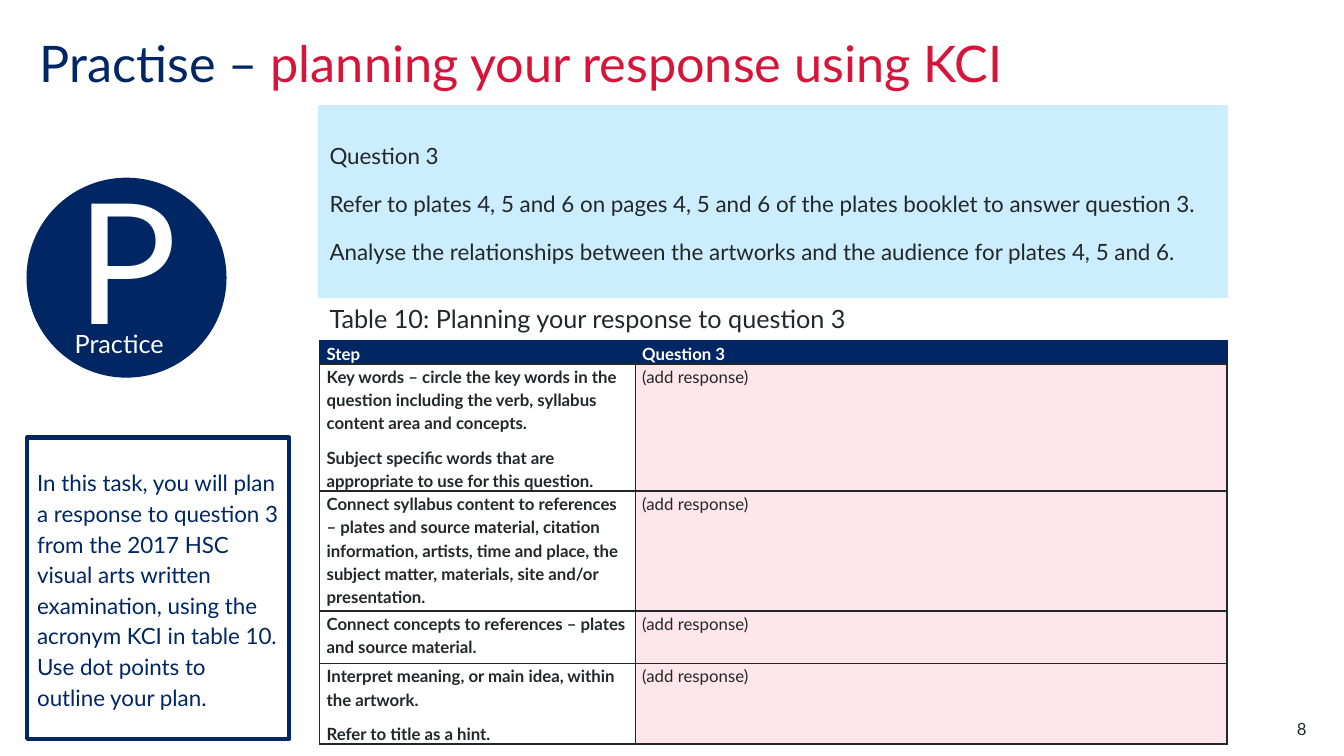
from lxml import etree
from pptx import Presentation
from pptx import util as u
from pptx.dml.color import RGBColor
from pptx.enum import shapes, text
from pptx.oxml.ns import qn

COLOURS = {"navy": "002664", "red": "D7153A", "ink": "22272B",
           "sky": "CBEDFD", "pink": "FFE6EA", "white": "FFFFFF"}
LEFT, CENTRE, RIGHT = text.PP_ALIGN.LEFT, text.PP_ALIGN.CENTER, text.PP_ALIGN.RIGHT


def write(frame, lines, size, colour, bold=False, align=LEFT, spacing=None,
          before=0, after=0, anchor=text.MSO_ANCHOR.TOP, insets=(0.1, 0.05, 0.1, 0.05)):
    frame.word_wrap = True
    frame.auto_size = text.MSO_AUTO_SIZE.NONE
    frame.vertical_anchor = anchor
    (frame.margin_left, frame.margin_top,
     frame.margin_right, frame.margin_bottom) = map(u.Inches, insets)
    for i, line in enumerate(lines):
        para = frame.add_paragraph() if i else frame.paragraphs[0]
        para.alignment = align
        para.line_spacing = spacing
        para.space_before = u.Pt(before if i else 0)
        para.space_after = u.Pt(after)
        span = para.add_run()
        span.text = line
        span.font.name = "Lato"
        span.font.size = u.Pt(size)
        span.font.bold = bold
        span.font.color.rgb = RGBColor.from_string(COLOURS[colour])


def add_block(page, kind, left, top, width, height, fill, line, weight):
    shape = page.shapes.add_shape(kind, *map(u.Inches, (left, top, width, height)))
    shape.shadow.inherit = False
    shape.fill.solid()
    shape.fill.fore_color.rgb = RGBColor.from_string(COLOURS[fill])
    shape.line.color.rgb = RGBColor.from_string(COLOURS[line])
    shape.line.width = u.Pt(weight)
    return shape


deck = Presentation()
deck.slide_width, deck.slide_height = u.Inches(13.33), u.Inches(7.5)
page = deck.slides.add_slide(deck.slide_layouts[5])
NO_INSETS = (0, 0, 0, 0)
MIDDLE = text.MSO_ANCHOR.MIDDLE

# Title in two colours
title = page.shapes.title
title.left, title.top = u.Inches(0.39), u.Inches(0.39)
title.width, title.height = u.Inches(11.02), u.Inches(1.1)
write(title.text_frame, ["Practise – "], 36, "navy", spacing=0.9, insets=NO_INSETS)
span = title.text_frame.paragraphs[0].add_run()
span.text = "planning your response using KCI"
span.font.name, span.font.size = "Lato", u.Pt(36)
span.font.color.rgb = RGBColor.from_string(COLOURS["red"])

# Practice badge, task box and question panel
badge = add_block(page, shapes.MSO_SHAPE.OVAL, 0.27, 1.77, 1.97, 1.97, "navy", "navy", 1)
write(badge.text_frame, ["P"], 120, "white", align=CENTRE, anchor=MIDDLE,
      insets=(0.1, 0, 0.1, 0.4))

task = add_block(page, shapes.MSO_SHAPE.RECTANGLE, 0.27, 4.34, 2.6, 2.99, "white", "navy", 3)
write(task.text_frame,
      ["In this task, you will plan a response to question 3 from the 2017 HSC visual arts "
       "written examination, using the acronym KCI in table 10. Use dot points to outline "
       "your plan."], 16, "navy", spacing=1.14, anchor=MIDDLE)

question = add_block(page, shapes.MSO_SHAPE.RECTANGLE, 3.17, 1.06, 8.99, 1.88, "sky", "sky", 3)
write(question.text_frame,
      ["Question 3",
       "Refer to plates 4, 5 and 6 on pages 4, 5 and 6 of the plates booklet to answer question 3.",
       "Analyse the relationships between the artworks and the audience for plates 4, 5 and 6."],
      16, "ink", spacing=1.15, before=12, anchor=MIDDLE)

# Badge label, table caption and page number
labels = [
    ((0.74, 3.26, 1.08, 0.48), "Practice", dict(size=18, colour="white", insets=NO_INSETS)),
    ((3.17, 3.09, 8.14, 0.29), "Table 10: Planning your response to question 3",
     dict(size=18, colour="ink", spacing=u.Pt(12), after=6)),
    ((12.17, 7.13, 0.79, 0.2), "8",
     dict(size=12, colour="ink", align=RIGHT, insets=NO_INSETS)),
]
for place, label, style in labels:
    box = page.shapes.add_textbox(*map(u.Inches, place))
    write(box.text_frame, [label], **style)

# Planning table
RESPONSE = ["(add response)"]
rows = [
    (0.22, ["Step"], ["Question 3"]),
    (1.26, ["Key words – circle the key words in the question including the verb, "
            "syllabus content area and concepts.",
            "Subject specific words that are appropriate to use for this question."], RESPONSE),
    (1.19, ["Connect syllabus content to references – plates and source material, citation "
            "information, artists, time and place, the subject matter, materials, site and/or "
            "presentation."], RESPONSE),
    (0.52, ["Connect concepts to references – plates and source material."], RESPONSE),
    (0.8, ["Interpret meaning, or main idea, within the artwork.",
           "Refer to title as a hint."], RESPONSE),
]
table = page.shapes.add_table(len(rows), 2, u.Inches(3.17), u.Inches(3.38),
                              u.Inches(9), u.Inches(3.99)).table
table.horz_banding = False
table.columns[0].width, table.columns[1].width = u.Inches(3.13), u.Inches(5.87)
for r, (height, *cells) in enumerate(rows):
    table.rows[r].height = u.Inches(height)
    for c, lines in enumerate(cells):
        cell = table.cell(r, c)
        header = r == 0
        write(cell.text_frame, lines, 12, "white" if header else "ink",
              bold=header or c == 0, spacing=1.15, before=4, after=4)
        cell.margin_left = cell.margin_right = u.Inches(0.07)
        cell.margin_top = cell.margin_bottom = 0

        # Borders come before the fill in the cell properties
        props = cell._tc.get_or_add_tcPr()
        outer = {"lnT", "lnL" if c == 0 else "lnR"} if header else set()
        for side in ("lnL", "lnR", "lnT", "lnB"):
            colour, weight = ("navy", 0.5) if side in outer else ("ink", 1)
            edge = etree.SubElement(props, qn("a:" + side), w=str(u.Pt(weight)))
            paint = etree.SubElement(edge, qn("a:solidFill"))
            etree.SubElement(paint, qn("a:srgbClr"), val=COLOURS[colour])
        cell.fill.solid()
        fill = "navy" if header else ("white", "pink")[c]
        cell.fill.fore_color.rgb = RGBColor.from_string(COLOURS[fill])

deck.save("out.pptx")
